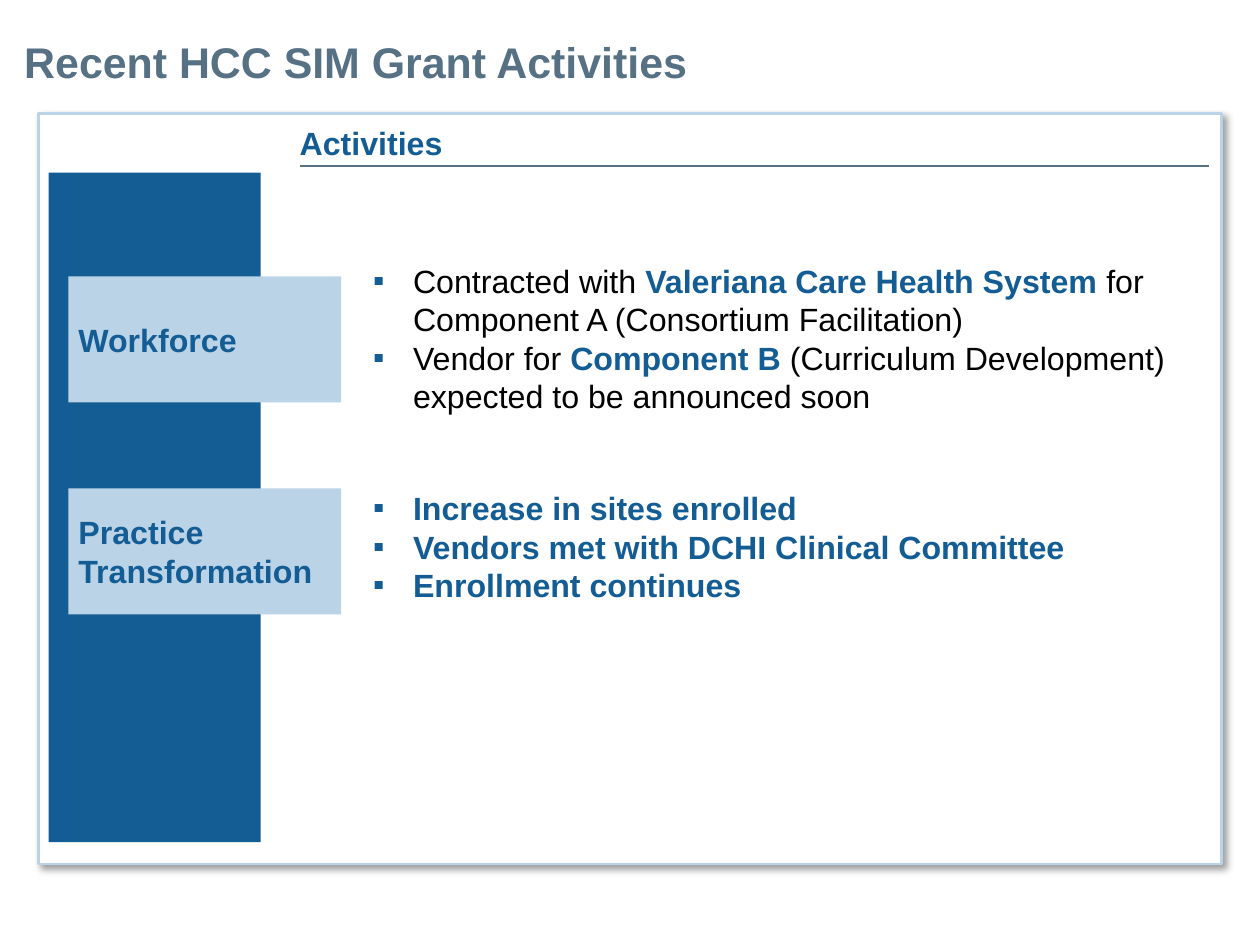
from lxml.etree import SubElement
from pptx import Presentation
from pptx.dml.color import RGBColor
from pptx.enum.shapes import MSO_CONNECTOR, MSO_SHAPE
from pptx.enum.text import MSO_ANCHOR, PP_ALIGN
from pptx.oxml.ns import qn
from pptx.util import Cm, Pt

COLORS = {
    "white": "FFFFFF",
    "black": "000000",
    "slate": "567084",
    "blue": "145D94",
    "pale": "BAD3E7",
}
FONT = "Arial"

# Each paragraph is a list of (text, emphasised) runs
WORKFORCE = [
    [("Contracted with ", False), ("Valeriana Care Health System ", True),
     ("for Component A (Consortium Facilitation)", False)],
    [("Vendor for ", False), ("Component B ", True),
     ("(Curriculum Development) expected to be announced soon", False)],
]
PRACTICE = [
    [("Increase in sites enrolled", True)],
    [("Vendors met with DCHI Clinical Committee", True)],
    [("Enrollment continues", True)],
]
# Label, label top, bullets top, bullets width, bullets height (cm, in the panel)
ROWS = [
    ("Workforce", WORKFORCE, 3.22, 2.92, 16.1, 3.07),
    ("Practice Transformation", PRACTICE, 7.41, 7.41, 17.48, 2.31),
]


def color(name):
    return RGBColor.from_string(COLORS[name])


def add_run(paragraph, text, color_name, size=18, bold=True):
    run = paragraph.add_run()
    run.text = text
    run.font.name = FONT
    run.font.size = Pt(size)
    run.font.bold = bold
    run.font.color.rgb = color(color_name)


def set_frame(shape, anchor, margin=0):
    frame = shape.text_frame
    frame.word_wrap = True
    frame.vertical_anchor = anchor
    frame.margin_left = frame.margin_right = Cm(margin)
    frame.margin_top = frame.margin_bottom = Cm(margin)
    return frame


def add_text_box(slide, left, top, width, height, anchor=MSO_ANCHOR.TOP):
    box = slide.shapes.add_textbox(Cm(left), Cm(top), Cm(width), Cm(height))
    return set_frame(box, anchor)


def add_rectangle(slide, left, top, width, height, fill):
    shape = slide.shapes.add_shape(
        MSO_SHAPE.RECTANGLE, Cm(left), Cm(top), Cm(width), Cm(height))
    shape.shadow.inherit = False
    shape.fill.solid()
    shape.fill.fore_color.rgb = color(fill)
    shape.line.fill.background()
    return shape


def add_bullet(paragraph):
    properties = paragraph._p.get_or_add_pPr()
    properties.set("marL", str(Cm(0.79)))
    properties.set("indent", str(Cm(-0.79)))
    bullet_color = SubElement(properties, qn("a:buClr"))
    SubElement(bullet_color, qn("a:srgbClr"), val=COLORS["blue"])
    SubElement(properties, qn("a:buFont"), typeface=FONT)
    SubElement(properties, qn("a:buChar"), char="▪")


def add_title(slide, left, top, width, height):
    frame = add_text_box(slide, left, top, width, height)
    add_run(frame.paragraphs[0], "Recent HCC SIM Grant Activities", "slate", 24)


def add_frame(slide, left, top, width, height):
    frame = add_rectangle(slide, left, top, width, height, "white")
    frame.line.color.rgb = color("pale")
    frame.line.width = Pt(1.5)
    # Soft shadow to the lower right
    effects = frame._element.spPr.find(qn("a:effectLst"))
    shadow = SubElement(effects, qn("a:outerShdw"), blurRad=str(Pt(4)),
                        dist=str(Pt(3)), dir="2700000", algn="tl", rotWithShape="0")
    shade = SubElement(shadow, qn("a:srgbClr"), val=COLORS["black"])
    SubElement(shade, qn("a:alpha"), val="40000")


def add_heading(slide, left, top, width):
    frame = add_text_box(slide, left, top, 11.02, 0.76, MSO_ANCHOR.BOTTOM)
    add_run(frame.paragraphs[0], "Activities", "blue")
    rule_top = Cm(top + 0.84)
    rule = slide.shapes.add_connector(
        MSO_CONNECTOR.STRAIGHT, Cm(left), rule_top, Cm(left + width), rule_top)
    rule.line.color.rgb = color("slate")
    rule.line.width = Pt(0.75)
    SubElement(rule._element.spPr, qn("a:effectLst"))


def add_label(slide, left, top, text):
    label = add_rectangle(slide, left, top, 5.39, 2.49, "pale")
    paragraph = set_frame(label, MSO_ANCHOR.MIDDLE, 0.2).paragraphs[0]
    paragraph.alignment = PP_ALIGN.LEFT
    add_run(paragraph, text, "blue")


def add_bullets(slide, left, top, width, height, items):
    frame = add_text_box(slide, left, top, width, height)
    for index, runs in enumerate(items):
        paragraph = frame.add_paragraph() if index else frame.paragraphs[0]
        add_bullet(paragraph)
        for text, strong in runs:
            add_run(paragraph, text, "blue" if strong else "black", bold=strong)


def add_panel(slide, left, top, width, height):
    add_frame(slide, left, top, width, height)
    # Dark band behind the labels
    add_rectangle(slide, left + 0.2, top + 1.17, 4.19, height - 1.6, "blue")
    add_heading(slide, left + 5.16, top + 0.2, width - 5.41)
    # One label and its bullets per row
    for name, items, label_top, text_top, text_width, text_height in ROWS:
        add_label(slide, left + 0.59, top + label_top, name)
        add_bullets(slide, left + 6.61, top + text_top, text_width, text_height, items)


def main():
    presentation = Presentation()
    presentation.slide_width = Cm(24.89)
    presentation.slide_height = Cm(18.67)
    slide = presentation.slides.add_slide(presentation.slide_layouts[6])
    add_title(slide, 0.48, 0.71, 23.95, 1.02)
    add_panel(slide, 0.76, 2.24, 23.37, 14.83)
    presentation.save("out.pptx")


if __name__ == "__main__":
    main()
